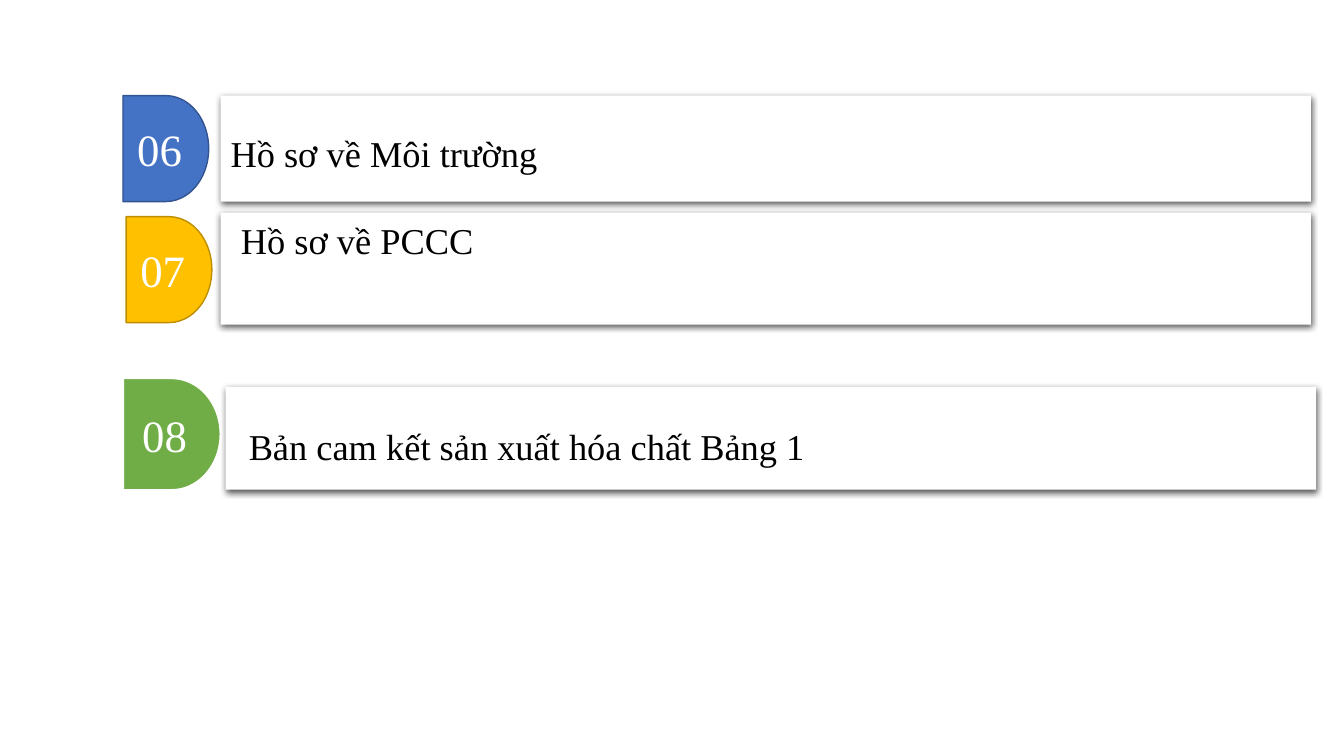
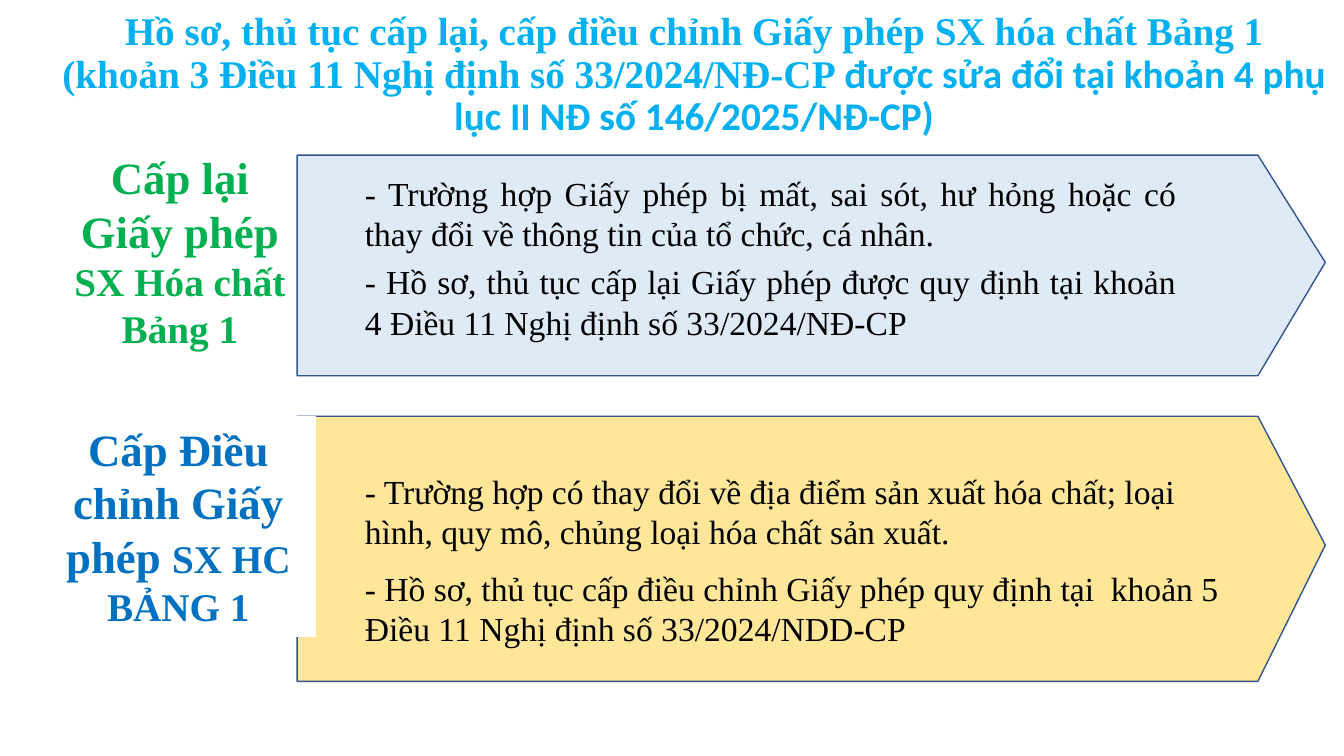
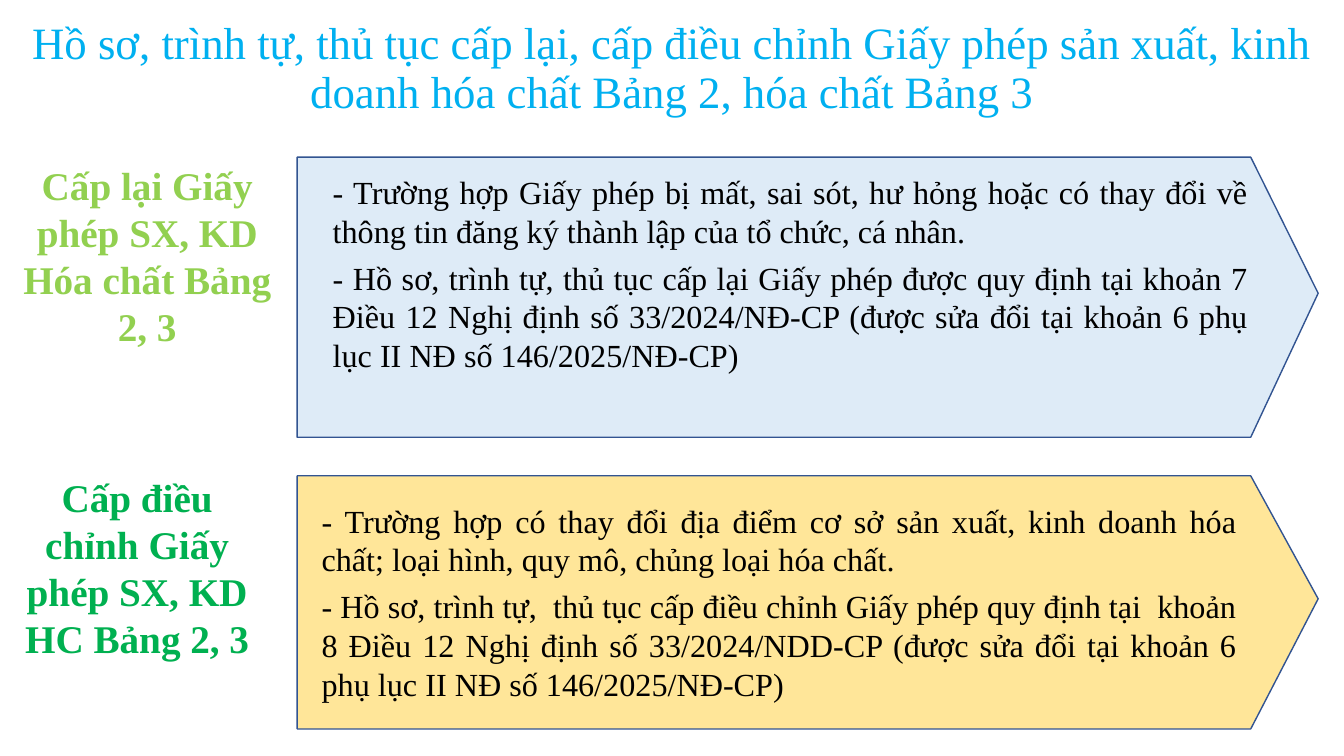
import pptx
import pptx.util
import pptx.dml.color
import pptx.enum.shapes
import pptx.enum.text
import pptx.oxml
import pptx.oxml.ns
import lxml.etree

Cm = pptx.util.Cm
Pt = pptx.util.Pt
RGBColor = pptx.dml.color.RGBColor
Align = pptx.enum.text.PP_ALIGN
Anchor = pptx.enum.text.MSO_ANCHOR
Preset = pptx.enum.shapes.MSO_SHAPE
qn = pptx.oxml.ns.qn

# Colours
WHITE = RGBColor(0xFF, 0xFF, 0xFF)
BLACK = RGBColor(0x00, 0x00, 0x00)
BLUE = RGBColor(0x44, 0x72, 0xC4)
DARK_BLUE = RGBColor(0x32, 0x54, 0x91)
GOLD = RGBColor(0xFF, 0xC0, 0x00)
DARK_GOLD = RGBColor(0xBD, 0x8E, 0x00)
LEAF = RGBColor(0x70, 0xAD, 0x47)
PALE_BLUE = RGBColor(0xDE, 0xEB, 0xF7)
PALE_GOLD = RGBColor(0xFF, 0xE6, 0x99)
SKY = RGBColor(0x00, 0xB0, 0xF0)
GREEN = RGBColor(0x00, 0xB0, 0x50)
LIME = RGBColor(0x92, 0xD0, 0x50)
LABEL_BLUE = RGBColor(0x00, 0x70, 0xC0)

# Shared measures
BLANK, TWO_LISTS = 6, 3
ARROW_LEFT, ARROW_HEAD, TIP_RATIO = 7.49, 1.7, 0.486
SHADOW = {"blurRad": Pt(4.5), "dist": Pt(1.5), "dir": 5400000, "algn": "t", "rotWithShape": 0}


class Deck:
    """Holds the style and the slide being built; lengths are centimetres."""

    font = "Times New Roman"

    def __init__(self):
        self.presentation = pptx.Presentation()
        self.presentation.slide_width = Cm(33.87)
        self.presentation.slide_height = Cm(19.05)
        self.slide = None

    def new_slide(self, layout):
        layouts = self.presentation.slide_layouts
        self.slide = self.presentation.slides.add_slide(layouts[layout])

    def paint(self, shape, fill, line=None, width=1):
        shape.shadow.inherit = False
        shape.fill.solid()
        shape.fill.fore_color.rgb = fill
        if line is None:
            shape.line.fill.background()
        else:
            shape.line.color.rgb = line
            shape.line.width = Pt(width)

    def fill_text(self, shape, paragraphs, size, color, bold=False, anchor=Anchor.TOP, **layout):
        """Each paragraph is a list of (text, changed font values) runs."""
        frame = shape.text_frame
        frame.word_wrap = True
        frame.auto_size = pptx.enum.text.MSO_AUTO_SIZE.NONE
        frame.vertical_anchor = anchor
        for number, runs in enumerate(paragraphs):
            paragraph = frame.add_paragraph() if number else frame.paragraphs[0]
            for name, value in layout.items():
                setattr(paragraph, name, value)
            for text, changes in runs:
                run = paragraph.add_run()
                run.text = text
                values = {"name": self.font, "size": Pt(size), "bold": bold, **changes}
                for name, value in values.items():
                    setattr(run.font, name, value)
                run.font.color.rgb = color

    def place(self, placeholder, box):
        """Move a placeholder into its box and in front of earlier shapes."""
        for name, value in zip(("left", "top", "width", "height"), box):
            setattr(placeholder, name, Cm(value))
        placeholder.element.getparent().append(placeholder.element)

    def title(self, box, runs, size, bold):
        title = self.slide.shapes.title
        self.place(title, box)
        for side in ("left", "top", "right", "bottom"):
            setattr(title.text_frame, "margin_" + side, 0)
        self.fill_text(title, [runs], size, SKY, bold, alignment=Align.CENTER, line_spacing=0.9)

    def body(self, index, box, texts, size, align, before, after):
        body = self.slide.placeholders[index]
        self.place(body, box)
        self.fill_text(body, [[(text, {})] for text in texts], size, BLACK, alignment=align,
                       space_before=Pt(before), space_after=Pt(after), line_spacing=1.0)
        # The dashes are typed, so the template's bullets and indents go
        for properties in body.element.iter(qn("a:pPr")):
            properties.set("marL", "0")
            properties.set("indent", "0")
            lxml.etree.SubElement(properties, qn("a:buNone"))

    def text(self, box, runs, size, color, bold=False, align=Align.CENTER, fill=None):
        textbox = self.slide.shapes.add_textbox(*map(Cm, box))
        if fill is not None:
            self.paint(textbox, fill, fill, 0.75)
        self.fill_text(textbox, [runs], size, color, bold, alignment=align)

    def card(self, box):
        card = self.slide.shapes.add_shape(Preset.RECTANGLE, *map(Cm, box))
        self.paint(card, WHITE)
        effects = card.element.spPr.find(qn("a:effectLst"))
        shadow = lxml.etree.SubElement(effects, qn("a:outerShdw"))
        for name, value in SHADOW.items():
            shadow.set(name, str(value))
        color = lxml.etree.SubElement(shadow, qn("a:srgbClr"), val="000000")
        lxml.etree.SubElement(color, qn("a:alpha"), val="63000")

    def number_tab(self, box, number, fill, line, width):
        tab = self.slide.shapes.add_shape(Preset.FLOWCHART_DELAY, *map(Cm, box))
        self.paint(tab, fill, line, width)
        self.fill_text(tab, [[(number, {})]], 32, WHITE, anchor=Anchor.MIDDLE,
                       alignment=Align.CENTER)

    def arrow(self, top, height, right, fill):
        shoulder, bottom = right - ARROW_HEAD, top + height
        outline = [(shoulder, top), (right, top + height * TIP_RATIO),
                   (shoulder, bottom), (ARROW_LEFT, bottom)]
        builder = self.slide.shapes.build_freeform(Cm(ARROW_LEFT), Cm(top))
        builder.add_line_segments([(Cm(x), Cm(y)) for x, y in outline], close=True)
        self.paint(builder.convert_to_shape(), fill, DARK_BLUE)


def numbered_files(deck):
    deck.new_slide(BLANK)
    # Card, number tab and caption of each row
    rows = [
        ((5.56, 2.41, 27.48, 2.67), (3.1, 2.41, 2.16, 2.67), "06", BLUE, DARK_BLUE, 1,
         (5.56, 3.18, 26.8, 1.37), "Hồ sơ về Môi trường"),
        ((5.56, 5.36, 27.48, 2.82), (3.18, 5.46, 2.16, 2.67), "07", GOLD, DARK_GOLD, 1,
         (5.82, 5.36, 27.1, 1.37), "Hồ sơ về PCCC"),
        ((5.69, 9.75, 27.48, 2.59), (3.1, 9.53, 2.46, 2.82), "08", LEAF, WHITE, 1.5,
         (6.02, 10.57, 27.13, 1.37), "Bản cam kết sản xuất hóa chất Bảng 1"),
    ]
    for card, tab, number, fill, line, width, caption, text in rows:
        deck.card(card)
        deck.number_tab(tab, number, fill, line, width)
        deck.text(caption, [(text, {})], 26, BLACK, align=Align.JUSTIFY)


def table_one_licence(deck):
    deck.new_slide(TWO_LISTS)
    deck.arrow(10.49, 6.68, 33.4, PALE_GOLD)
    deck.arrow(3.91, 5.56, 33.4, PALE_BLUE)
    # Labels
    smaller = {"size": Pt(28)}
    deck.text((1.55, 3.66, 5.97, 5.38),
              [("Cấp lại Giấy phép ", {}), ("SX Hóa chất Bảng 1", smaller)], 32, GREEN, True)
    deck.text((1.04, 10.49, 6.91, 5.56),
              [("Cấp Điều chỉnh Giấy phép ", {}), ("SX HC BẢNG 1", smaller)],
              32, LABEL_BLUE, True, fill=WHITE)
    # Title and lists
    deck.title((1.55, 0.3, 31.88, 3.23), [
        ("Hồ sơ, thủ tục cấp lại, cấp điều chỉnh Giấy phép SX hóa chất Bảng 1 "
         "(khoản 3 Điều 11 Nghị định số 33/2024/NĐ-CP", {}),
        (" được sửa đổi tại khoản 4 phụ lục II NĐ số 146/2025/NĐ-CP)", {"name": "Calibri"}),
    ], 28, True)
    deck.body(1, (8.94, 4.22, 20.96, 4.57), [
        "- Trường hợp Giấy phép bị mất, sai sót, hư hỏng hoặc có thay đổi về thông tin "
        "của tổ chức, cá nhân.",
        "- Hồ sơ, thủ tục cấp lại Giấy phép được quy định tại khoản 4 Điều 11 "
        "Nghị định số 33/2024/NĐ-CP",
    ], 24, Align.JUSTIFY, 5.8, 0)
    deck.body(2, (8.94, 11.73, 22.5, 4.78), [
        "- Trường hợp có thay đổi về địa điểm sản xuất hóa chất; loại hình, quy mô, "
        "chủng loại hóa chất sản xuất.",
        "- Hồ sơ, thủ tục cấp điều chỉnh Giấy phép quy định tại  khoản 5 Điều 11 "
        "Nghị định số 33/2024/NDD-CP",
    ], 24, Align.LEFT, 6, 6)


def tables_two_three_licence(deck):
    deck.new_slide(TWO_LISTS)
    deck.arrow(11.99, 6.38, 33.22, PALE_GOLD)
    deck.arrow(3.96, 7.06, 33.22, PALE_BLUE)
    # Labels
    deck.text((0.28, 3.94, 6.86, 5.05),
              [("Cấp lại Giấy phép SX, KD Hóa chất Bảng 2, 3", {})], 28, LIME, True)
    deck.text((0, 11.79, 6.91, 5.05),
              [("Cấp điều chỉnh Giấy phép SX, KD HC Bảng 2, 3", {})], 28, GREEN, True, fill=WHITE)
    # Title and lists
    deck.title((0.64, 0.53, 32.59, 2.46), [
        ("Hồ sơ, trình tự, thủ tục cấp lại, cấp điều chỉnh Giấy phép sản xuất, "
         "kinh doanh hóa chất Bảng 2, hóa chất Bảng 3", {}),
    ], 32, False)
    deck.body(1, (8.13, 4.22, 23.6, 5.38), [
        "- Trường hợp Giấy phép bị mất, sai sót, hư hỏng hoặc có thay đổi về thông tin "
        "đăng ký thành lập của tổ chức, cá nhân.",
        "- Hồ sơ, trình tự, thủ tục cấp lại Giấy phép được quy định tại khoản 7 Điều 12 "
        "Nghị định số 33/2024/NĐ-CP (được sửa đổi tại khoản 6 phụ lục II "
        "NĐ số 146/2025/NĐ-CP)",
    ], 23, Align.JUSTIFY, 5.8, 0)
    deck.body(2, (7.85, 12.5, 23.6, 5.38), [
        "- Trường hợp có thay đổi địa điểm cơ sở sản xuất, kinh doanh hóa chất; "
        "loại hình, quy mô, chủng loại hóa chất.",
        "- Hồ sơ, trình tự,  thủ tục cấp điều chỉnh Giấy phép quy định tại  khoản 8 Điều 12 "
        "Nghị định số 33/2024/NDD-CP (được sửa đổi tại khoản 6 phụ lục II "
        "NĐ số 146/2025/NĐ-CP)",
    ], 23, Align.JUSTIFY, 0, 6)


def main():
    deck = Deck()
    numbered_files(deck)
    table_one_licence(deck)
    tables_two_three_licence(deck)
    deck.presentation.save("out.pptx")


if __name__ == "__main__":
    main()
